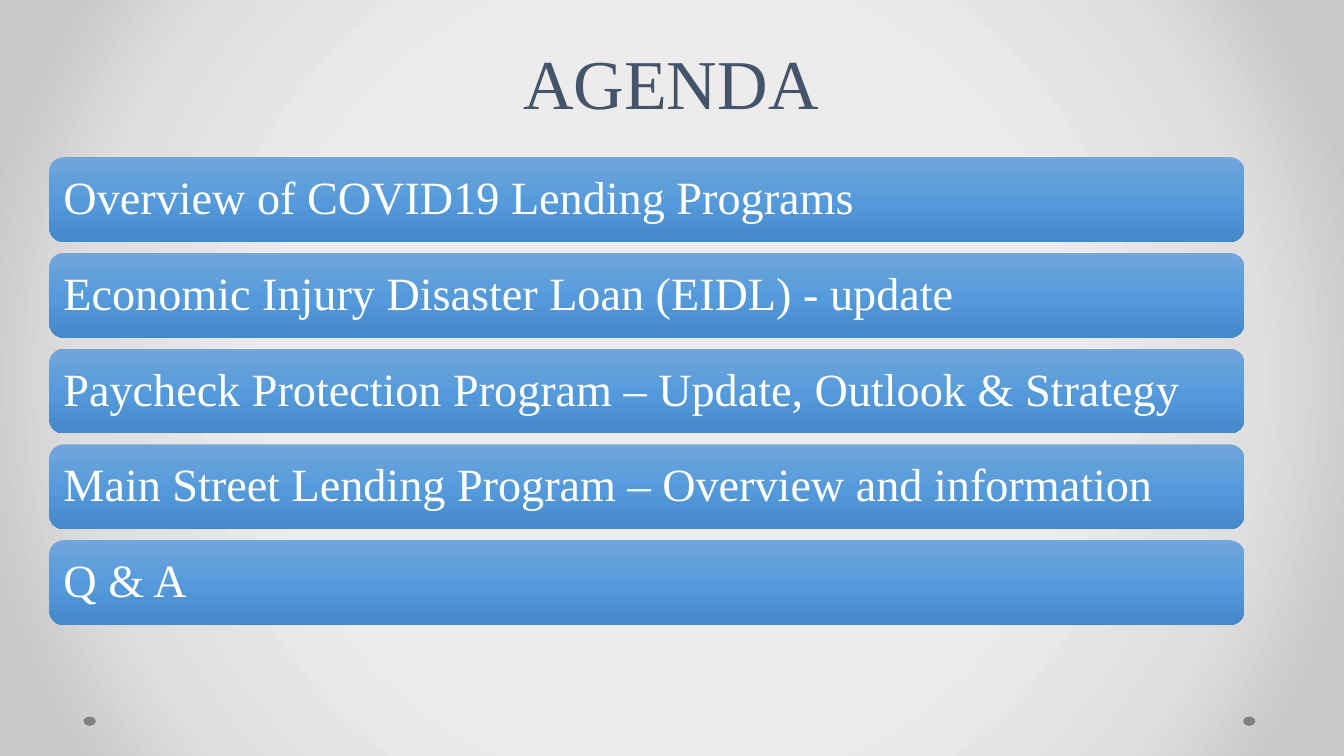
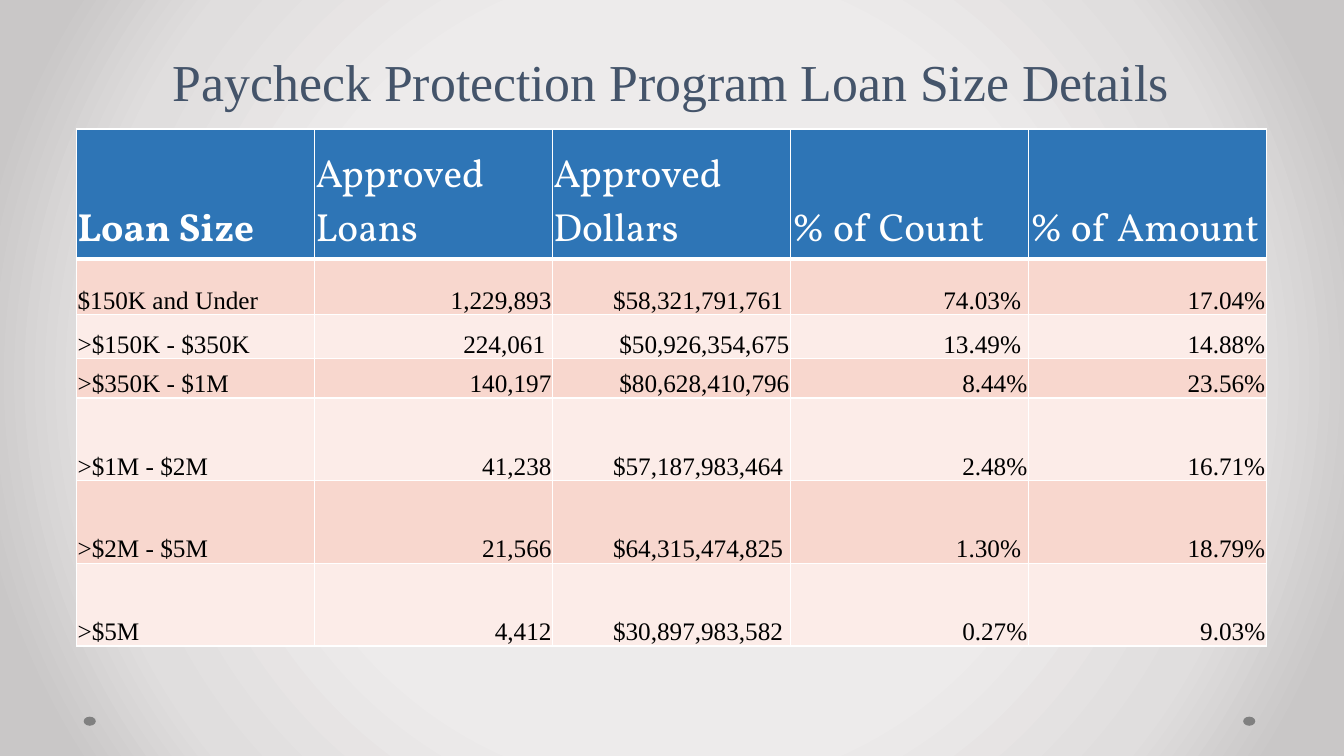
import pptx
import pptx.util
import pptx.dml.color
import pptx.enum.shapes
import pptx.enum.text
import pptx.oxml
import pptx.oxml.ns

In, Pt = pptx.util.Inches, pptx.util.Pt
RGB = pptx.dml.color.RGBColor
ALIGN, ANCHOR = pptx.enum.text.PP_ALIGN, pptx.enum.text.MSO_ANCHOR
SHAPE = pptx.enum.shapes.MSO_SHAPE
qn, nsdecls = pptx.oxml.ns.qn, pptx.oxml.ns.nsdecls

W, H = 13.33, 7.5
SERIF, DISPLAY = "Times New Roman", "Vollkorn"
COLORS = {"title": "44546A", "dot": "808080", "white": "FFFFFF", "black": "000000",
          "header": "2E75B6", "band_dark": "F8D7CE", "band_light": "FCECE8"}
BACKGROUND = [(50, "EDEBEB"), (76, "E0DEDE"), (92, "C9C7C7")]
BAR_FILL = [(0, "71A6DB"), (50, "559BDB"), (100, "448ACA")]
RADIAL = '<a:path path="circle"><a:fillToRect l="50000" t="50000" r="50000" b="50000"/></a:path>'
DOWNWARD = '<a:lin ang="5400000" scaled="0"/>'

TITLE_BOX = (0.56, 0.27, 12.19, 1.01)
AGENDA_BOX = (0.49, 1.56, 11.85, 4.64)
TABLE_BOX = (0.76, 1.28, 11.8, 5.13)

AGENDA = ["Overview of COVID19 Lending Programs",
          "Economic Injury Disaster Loan (EIDL) - update",
          "Paycheck Protection Program – Update, Outlook & Strategy",
          "Main Street Lending Program – Overview and information",
          "Q & A"]
LOANS = [
    ["Loan Size", "Approved Loans", "Approved Dollars", "% of Count", "% of Amount"],
    ["$150K and Under", "1,229,893", "$58,321,791,761 ", "74.03% ", "17.04%"],
    [">$150K - $350K", "224,061 ", "$50,926,354,675", " 13.49% ", "14.88%"],
    [">$350K - $1M", "140,197", "$80,628,410,796", "8.44%", "23.56%"],
    [">$1M - $2M", "41,238", "$57,187,983,464 ", "2.48%", "16.71%"],
    [">$2M - $5M", "21,566", "$64,315,474,825 ", "1.30% ", "18.79%"],
    [">$5M", "4,412", "$30,897,983,582 ", "0.27%", "9.03%"],
]
ROW_HEIGHTS = [1.29, 0.55, 0.44, 0.39, 0.82, 0.82, 0.82]


# Shared formatting
def set_attrs(obj, values):
    for name, value in values.items():
        setattr(obj, name, value)


def write(tf, text, color, para, font):
    p = tf.paragraphs[0]
    set_attrs(p, para)
    r = p.add_run()
    r.text = text
    set_attrs(r.font, font)
    r.font.color.rgb = RGB.from_string(COLORS[color])


def set_gradient(fill, owner, stops, direction):
    fill.gradient()
    old = owner.find(".//" + qn("a:gradFill"))
    gs = "".join(f'<a:gs pos="{pos * 1000}"><a:srgbClr val="{color}"/></a:gs>'
                 for pos, color in stops)
    new = pptx.oxml.parse_xml(f'<a:gradFill {nsdecls("a")} rotWithShape="1">'
                              f'<a:gsLst>{gs}</a:gsLst>{direction}</a:gradFill>')
    old.getparent().replace(old, new)


def add_plain_shape(s, kind, box):
    sp = s.shapes.add_shape(kind, *map(In, box))
    sp.shadow.inherit = False
    sp.line.fill.background()
    return sp


def set_borders(cell, bottom):
    tcPr = cell._tc.get_or_add_tcPr()
    for i, (side, width) in enumerate([("L", 1), ("R", 1), ("T", 1), ("B", bottom)]):
        tcPr.insert(i, pptx.oxml.parse_xml(
            f'<a:ln{side} {nsdecls("a")} w="{Pt(width)}"><a:solidFill>'
            f'<a:srgbClr val="{COLORS["white"]}"/></a:solidFill></a:ln{side}>'))


# Slide frame: title and the two footer dots
def add_slide(prs, title, size, anchor):
    s = prs.slides.add_slide(prs.slide_layouts[5])
    for x in (0.83, 12.33):
        dot = add_plain_shape(s, SHAPE.OVAL, (x, 7.11, 0.12, 0.09))
        dot.fill.solid()
        dot.fill.fore_color.rgb = RGB.from_string(COLORS["dot"])
    sp = s.shapes.title
    set_attrs(sp, dict(zip(("left", "top", "width", "height"), map(In, TITLE_BOX))))
    set_attrs(sp.text_frame, {"vertical_anchor": anchor, "word_wrap": True,
                              "auto_size": pptx.enum.text.MSO_AUTO_SIZE.NONE})
    write(sp.text_frame, title, "title",
          {"alignment": ALIGN.CENTER, "line_spacing": Pt(48)},
          {"size": Pt(size), "name": SERIF})
    return s


# Agenda: equal bars with equal gaps
def add_agenda(s, box, items, gap=0.11):
    x, y, w, h = box
    bar_h = (h - gap * (len(items) - 1)) / len(items)
    for i, text in enumerate(items):
        sp = add_plain_shape(s, SHAPE.ROUNDED_RECTANGLE,
                             (x, y + i * (bar_h + gap), w, bar_h))
        set_gradient(sp.fill, sp._element.spPr, BAR_FILL, DOWNWARD)
        set_attrs(sp.text_frame, {"word_wrap": True, "vertical_anchor": ANCHOR.MIDDLE,
                                  "margin_left": In(0.1), "margin_right": In(0.1)})
        write(sp.text_frame, text, "white",
              {"alignment": ALIGN.LEFT, "line_spacing": 0.9},
              {"size": Pt(33), "name": SERIF})


# Loan table: header row over banded rows
def add_loan_table(s, box, rows, heights):
    table = s.shapes.add_table(len(rows), len(rows[0]), *map(In, box)).table
    set_attrs(table, {"first_row": False, "horz_banding": False})
    for column in table.columns:
        column.width = In(box[2] / len(rows[0]))
    for i, (values, height) in enumerate(zip(rows, heights)):
        table.rows[i].height = In(height)
        header = i == 0
        band = "header" if header else "band_dark" if i % 2 else "band_light"
        for j, text in enumerate(values):
            cell = table.cell(i, j)
            set_attrs(cell, {"margin_left": In(0.01), "margin_right": In(0.01),
                             "margin_top": In(0.01), "margin_bottom": 0,
                             "vertical_anchor": ANCHOR.BOTTOM})
            cell.fill.solid()
            cell.fill.fore_color.rgb = RGB.from_string(COLORS[band])
            set_borders(cell, 3 if header else 1)
            write(cell.text_frame, text, "white" if header else "black",
                  {"alignment": ALIGN.LEFT if header or j == 0 else ALIGN.RIGHT},
                  {"size": Pt(28 if header else 18), "bold": header and j == 0,
                   "name": DISPLAY if header else SERIF})


def main():
    prs = pptx.Presentation()
    set_attrs(prs, {"slide_width": In(W), "slide_height": In(H)})
    master = prs.slide_master
    set_gradient(master.background.fill, master.element, BACKGROUND, RADIAL)

    s = add_slide(prs, "AGENDA", 50, ANCHOR.BOTTOM)
    add_agenda(s, AGENDA_BOX, AGENDA)

    s = add_slide(prs, "Paycheck Protection Program Loan Size Details", 37, ANCHOR.MIDDLE)
    add_loan_table(s, TABLE_BOX, LOANS, ROW_HEIGHTS)

    prs.save("out.pptx")


if __name__ == "__main__":
    main()
